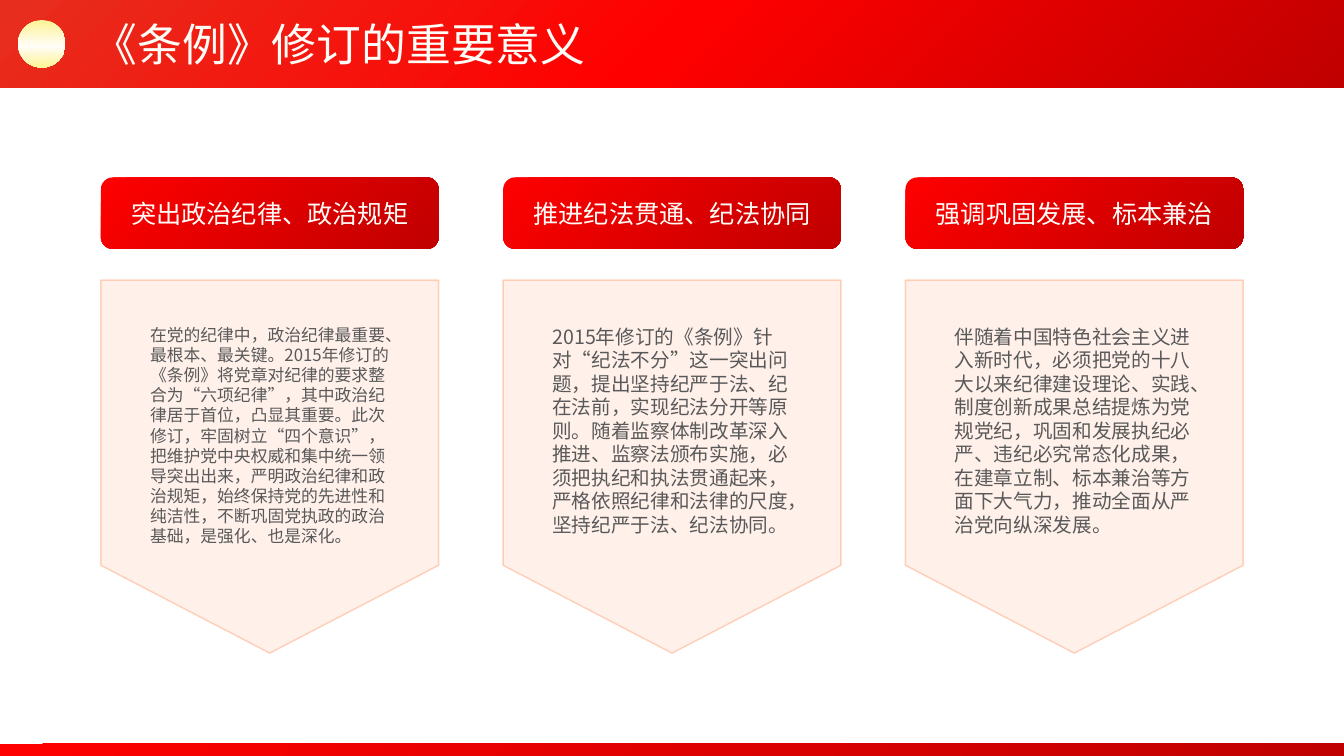
from lxml import etree
from pptx import Presentation, util as u
from pptx.dml.color import RGBColor
from pptx.enum import shapes, text
from pptx.oxml.ns import qn

WIDTH, HEIGHT = 13.33, 7.5
MARGIN, COLUMN, COLUMNS = 1, 3.35, 3
PITCH = (WIDTH - 2 * MARGIN - COLUMN) / (COLUMNS - 1)
FONT = "Noto Sans CJK SC"
COLORS = {
    "flame": "E72E1E", "red": "FF0000", "crimson": "C00000",
    "gold": "FDF394", "cream": "FFFDF8", "peach": "FFA075", "gray": "595959",
}
RED_BLEND = [(0, "red"), (100, "crimson")]
HEADER_BLEND = [(0, "flame"), (50, "red"), (100, "crimson")]
GOLD_BLEND = [(0, "gold"), (55, "cream"), (100, "gold")]

MEANINGS = [
    ("突出政治纪律、政治规矩", 12,
     "在党的纪律中，政治纪律最重要、最根本、最关键。2015年修订的《条例》将党章对纪律的要求"
     "整合为“六项纪律”，其中政治纪律居于首位，凸显其重要。此次修订，牢固树立“四个意识”，"
     "把维护党中央权威和集中统一领导突出出来，严明政治纪律和政治规矩，始终保持党的先进性和"
     "纯洁性，不断巩固党执政的政治基础，是强化、也是深化。"),
    ("推进纪法贯通、纪法协同", 14,
     "2015年修订的《条例》针对“纪法不分”这一突出问题，提出坚持纪严于法、纪在法前，"
     "实现纪法分开等原则。随着监察体制改革深入推进、监察法颁布实施，必须把执纪和执法贯通起来，"
     "严格依照纪律和法律的尺度，坚持纪严于法、纪法协同。"),
    ("强调巩固发展、标本兼治", 14,
     "伴随着中国特色社会主义进入新时代，必须把党的十八大以来纪律建设理论、实践、"
     "制度创新成果总结提炼为党规党纪，巩固和发展执纪必严、违纪必究常态化成果，"
     "在建章立制、标本兼治等方面下大气力，推动全面从严治党向纵深发展。"),
]


def inches(box):
    return [u.Inches(length) for length in box]


def blend(fill, parent, stops, angle):
    fill.gradient()
    fill.gradient_angle = 360 - angle
    stop_list = parent.find(qn("a:gradFill")).find(qn("a:gsLst"))
    for stop in list(stop_list):
        stop_list.remove(stop)
    for position, color in stops:
        stop = etree.SubElement(stop_list, qn("a:gs"), pos=str(position * 1000))
        etree.SubElement(stop, qn("a:srgbClr"), val=COLORS[color])


def tint(fill, parent, color, opacity):
    fill.solid()
    fill.fore_color.rgb = RGBColor.from_string(COLORS[color])
    value = parent.find(qn("a:solidFill")).find(qn("a:srgbClr"))
    etree.SubElement(value, qn("a:alpha"), val=str(opacity * 1000))


def add_plain(slide, kind, box):
    shape = slide.shapes.add_shape(kind, *inches(box))
    shape.shadow.inherit = False
    shape.line.fill.background()
    return shape


def add_blended(slide, kind, box, stops, angle=45):
    shape = add_plain(slide, kind, box)
    blend(shape.fill, shape._element.spPr, stops, angle)
    return shape


def write(shape, words, size, color):
    paragraph = shape.text_frame.paragraphs[0]
    paragraph.text = words
    paragraph.font.size = u.Pt(size)
    paragraph.font.name = FONT
    paragraph.font.color.rgb = RGBColor.from_string(COLORS[color])
    properties = paragraph._p.pPr.find(qn("a:defRPr"))
    etree.SubElement(properties, qn("a:ea"), typeface=FONT)
    return paragraph


def add_header(slide, left, top, width, height):
    add_blended(slide, shapes.MSO_SHAPE.RECTANGLE, (left, top, width, height), HEADER_BLEND)
    add_blended(slide, shapes.MSO_SHAPE.OVAL,
                (left + 0.18, top + 0.2, 0.47, 0.47), GOLD_BLEND, 90)
    title = slide.shapes.add_textbox(*inches((left + 0.82, top + 0.12, 5.14, 0.64)))
    title.text_frame.word_wrap = False
    run = write(title, "《条例》修订的重要意义", 32, "cream").runs[0]
    blend(run.font.fill, run._r.rPr, GOLD_BLEND, 90)


def add_footer(slide, left, top, width, height):
    add_blended(slide, shapes.MSO_SHAPE.RECTANGLE, (left, top, width, height), RED_BLEND)


def add_arrow_panel(slide, left, top, width, height):
    shift = (height - width) / 2
    panel = add_plain(slide, shapes.MSO_SHAPE.PENTAGON,
                      (left - shift, top + shift, height, width))
    panel.rotation = 90
    panel.adjustments[0] = 0.26
    tint(panel.fill, panel._element.spPr, "peach", 15)
    panel.line.width = u.Pt(1)
    tint(panel.line.fill, panel.line._ln, "peach", 45)


def add_meaning(slide, left, top, width, height, heading, size, body):
    add_arrow_panel(slide, left, top + 1.02, width, height - 1.02)
    label = add_blended(slide, shapes.MSO_SHAPE.ROUNDED_RECTANGLE,
                        (left, top, width, 0.71), RED_BLEND)
    label.text_frame.vertical_anchor = text.MSO_ANCHOR.MIDDLE
    write(label, heading, 18, "cream").alignment = text.PP_ALIGN.CENTER
    passage = slide.shapes.add_textbox(*inches((left + 0.39, top + 1.41, 2.57, 2.3)))
    passage.text_frame.word_wrap = True
    write(passage, body, size, "gray")


def main():
    presentation = Presentation()
    presentation.slide_width, presentation.slide_height = inches((WIDTH, HEIGHT))
    slide = presentation.slides.add_slide(presentation.slide_layouts[6])
    add_footer(slide, 0, HEIGHT - 0.12, WIDTH, 0.12)
    add_header(slide, 0, 0, WIDTH, 0.87)
    for index, meaning in enumerate(MEANINGS):
        add_meaning(slide, MARGIN + index * PITCH, 1.76, COLUMN, 4.72, *meaning)
    presentation.save("out.pptx")


if __name__ == "__main__":
    main()
